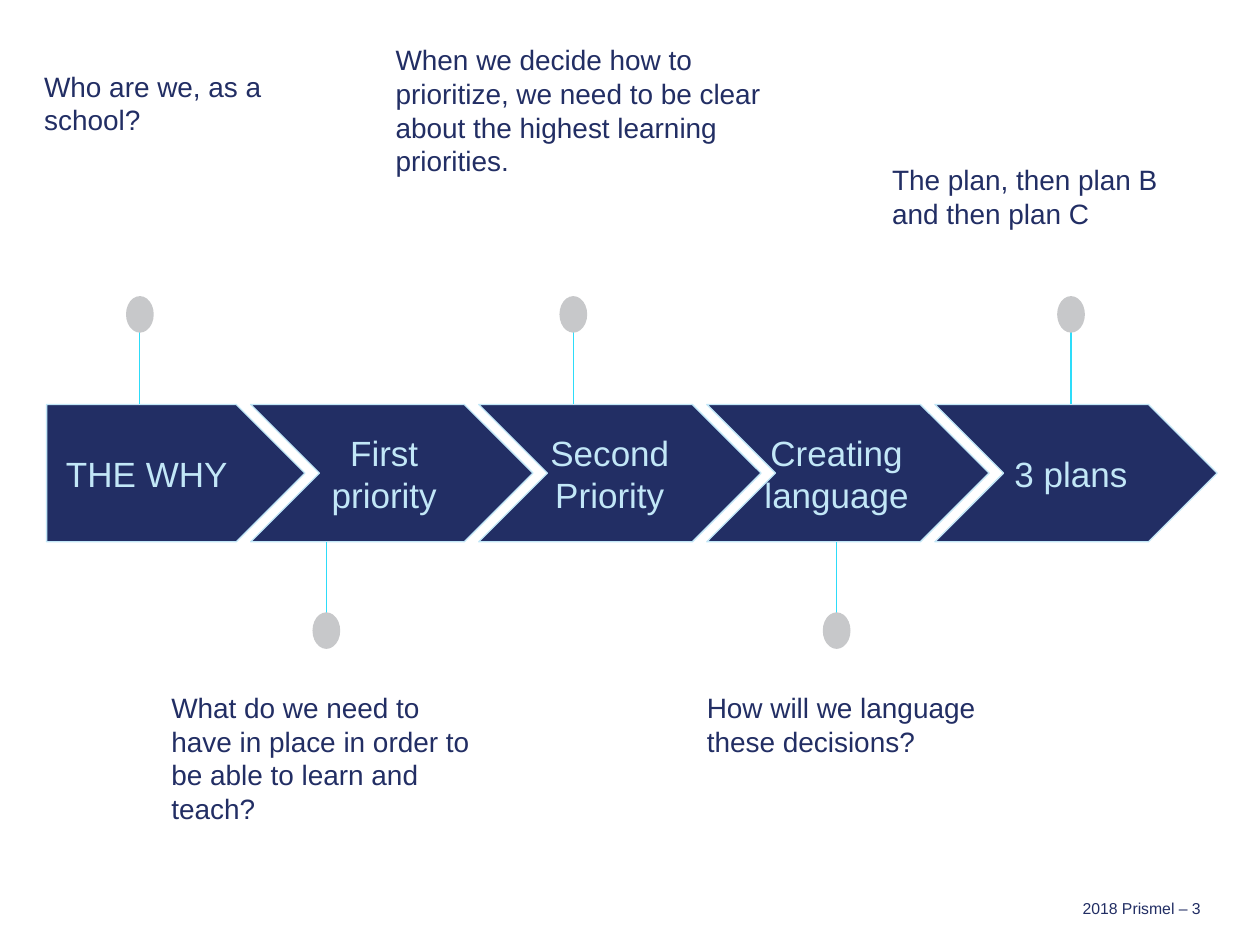
"""Build a five-step arrow timeline with a callout for each step."""
from pptx import Presentation
from pptx.dml.color import RGBColor
from pptx.enum import shapes, text
from pptx.oxml import ns, xmlchemy
from pptx.util import Inches, Pt

NAVY, PALE, CYAN, GREY = "222E64", "C2E7F7", "2DDCF9", "C7C8CA"
FOOTER = "2018 Prismel – 3"

# label, label left, label width, pin centre, pin above, note, note box
STEPS = [
    ("THE WHY", 0.37, 1.59, 1.11, True,
     "Who are we, as a school?", (0.35, 0.55, 2.45, 1.32)),
    ("First priority", 2.33, 1.44, 2.59, False,
     "What do we need to have in place in order to be able to learn and teach?",
     (1.36, 5.48, 2.45, 1.32)),
    ("Second Priority", 4.12, 1.44, 4.55, True,
     "When we decide how to prioritize, we need to be clear about the highest learning priorities.",
     (3.14, 0.34, 2.93, 1.52)),
    ("Creating language", 5.92, 1.44, 6.64, False,
     "How will we language these decisions?", (5.61, 5.48, 2.45, 1.32)),
    ("3 plans", 7.78, 1.44, 8.5, True,
     "The plan, then plan B and then plan C", (7.08, 1.29, 2.45, 0.87)),
]
ARROW_TOP, ARROW_HEIGHT = 3.21, 1.09
CHEVRON_LEFT, CHEVRON_WIDTH, CHEVRON_STEP = 1.99, 2.24, 1.81
LABEL_TOP, LABEL_HEIGHT = 3.41, 0.69
DOT_WIDTH, DOT_HEIGHT = 0.22, 0.29


def color(value):
    return RGBColor.from_string(value)


def add_text(slide, words, box, size, ink, align=text.PP_ALIGN.LEFT,
             anchor=text.MSO_ANCHOR.TOP):
    frame = slide.shapes.add_textbox(*map(Inches, box)).text_frame
    frame.word_wrap = True
    frame.vertical_anchor = anchor
    frame.margin_left = frame.margin_right = frame.margin_top = frame.margin_bottom = 0
    paragraph = frame.paragraphs[0]
    paragraph.text = words
    paragraph.alignment = align
    paragraph.font.size = Pt(size)
    paragraph.font.name = "Arial"
    paragraph.font.color.rgb = color(ink)


def add_filled(slide, kind, box, fill, outline=None):
    shape = slide.shapes.add_shape(kind, *map(Inches, box))
    shape.shadow.inherit = False
    shape.fill.solid()
    shape.fill.fore_color.rgb = color(fill)
    if outline:
        shape.line.color.rgb = color(outline)
        shape.line.width = Pt(0.75)
    else:
        shape.line.fill.background()


def add_pin(slide, center, above):
    start, end, dot_top = (2.4, ARROW_TOP, 2.35) if above else (
        5.09, ARROW_TOP + ARROW_HEIGHT, 4.86)
    line = slide.shapes.add_connector(
        shapes.MSO_CONNECTOR.STRAIGHT, *map(Inches, (center, start, center, end)))
    line.line.color.rgb = color(CYAN)
    line.line.width = Pt(0.75)
    line._element.spPr.append(xmlchemy.OxmlElement("a:effectLst"))
    add_filled(slide, shapes.MSO_SHAPE.OVAL,
               (center - DOT_WIDTH / 2, dot_top, DOT_WIDTH, DOT_HEIGHT), GREY)


def main():
    presentation = Presentation()
    presentation.slide_width, presentation.slide_height = Inches(10), Inches(7.5)
    slide = presentation.slides.add_slide(presentation.slide_layouts[6])

    add_text(slide, FOOTER, (5.6, 7.13, 3.93, 0.15), 9, NAVY, text.PP_ALIGN.RIGHT)
    for index, (label, left, width, center, above, note, note_box) in enumerate(STEPS):
        if index == 0:
            kind, arrow_left, arrow_width = shapes.MSO_SHAPE.PENTAGON, 0.37, 2.05
        else:
            kind, arrow_width = shapes.MSO_SHAPE.CHEVRON, CHEVRON_WIDTH
            arrow_left = CHEVRON_LEFT + (index - 1) * CHEVRON_STEP
        add_filled(slide, kind, (arrow_left, ARROW_TOP, arrow_width, ARROW_HEIGHT),
                   NAVY, PALE)
        add_text(slide, label, (left, LABEL_TOP, width, LABEL_HEIGHT), 20, PALE,
                 text.PP_ALIGN.CENTER, text.MSO_ANCHOR.MIDDLE)
        add_pin(slide, center, above)
        add_text(slide, note, note_box, 16, NAVY)

    presentation.save("out.pptx")


if __name__ == "__main__":
    main()
